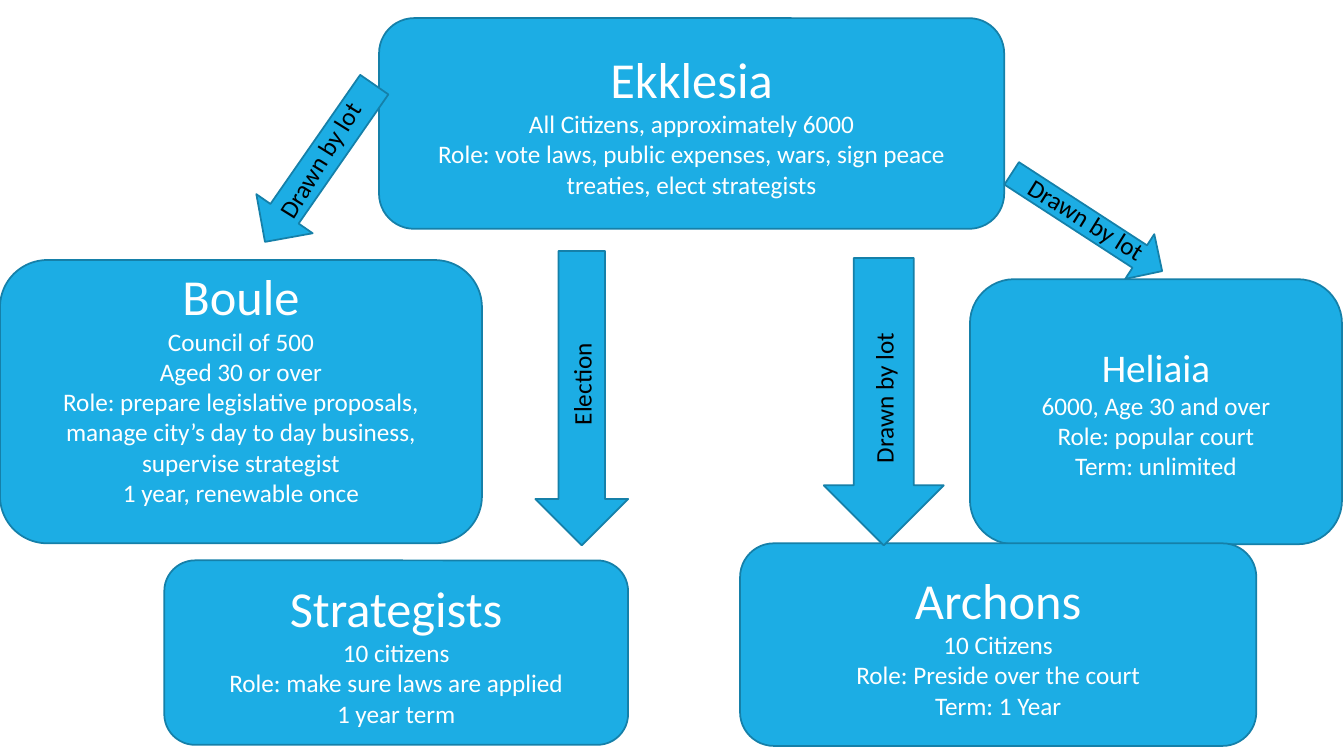
from pptx import Presentation
from pptx.dml.color import RGBColor
from pptx.enum.shapes import MSO_SHAPE
from pptx.enum.text import MSO_ANCHOR, PP_ALIGN
from pptx.util import Inches, Pt

ROUNDED = MSO_SHAPE.ROUNDED_RECTANGLE
RIGHT = MSO_SHAPE.RIGHT_ARROW
DOWN = MSO_SHAPE.DOWN_ARROW
MIDDLE = MSO_ANCHOR.MIDDLE
CENTER = PP_ALIGN.CENTER

FONT = "Calibri"
BLUE, EDGE, WHITE, BLACK = "1CADE4", "1580A9", "FFFFFF", "000000"
BODY_SIZE = 18
LABEL_HEIGHT = 0.4

INSTITUTIONS = [
    ((3.76, 0.18, 6.2, 2.09), "Ekklesia", 36, 0.05, [
        "All Citizens, approximately 6000",
        "Role: vote laws, public expenses, wars, sign peace treaties, elect strategists"]),
    ((9.62, 2.77, 3.69, 2.63), "Heliaia", 28, 0.05, [
        "6000, Age 30 and over", "Role: popular court", "Term: unlimited"]),
    ((0, 2.58, 4.78, 2.81), "Boule", 36, 0.35, [
        "Council of 500",
        "Aged 30 or over",
        "Role: prepare legislative proposals, manage city’s day to day business, supervise strategist",
        "1 year, renewable once"]),
    ((1.63, 5.56, 4.6, 1.83), "Strategists", 36, 0.05, [
        "10 citizens", "Role: make sure laws are applied", "1 year term"]),
    ((7.34, 5.39, 5.12, 2.01), "Archons", 36, 0.05, [
        "10 Citizens", "Role: Preside over the court", "Term: 1 Year"]),
]

APPOINTMENTS = [
    ((9.89, 1.94, 1.78, 0.53), RIGHT, 33, "Drawn by lot", 1.5, 31.9, 0.03),
    ((2.22, 1.28, 1.9, 0.68), RIGHT, 124.8, "Drawn by lot", 1.5, 301.9, 0.04),
    ((5.31, 2.49, 0.92, 2.92), DOWN, 0, "Election", 1.03, 270, 0.15),
    ((8.17, 2.56, 1.19, 2.85), DOWN, 0, "Drawn by lot", 1.5, 270, 0.04),
]


def color(value):
    return RGBColor.from_string(value)


def style_text(paragraph, size, value):
    paragraph.font.name = FONT
    paragraph.font.size = Pt(size)
    paragraph.font.color.rgb = color(value)


def add_blue_shape(slide, kind, box):
    shape = slide.shapes.add_shape(kind, *map(Inches, box))
    shape.shadow.inherit = False
    shape.fill.solid()
    shape.fill.fore_color.rgb = color(BLUE)
    shape.line.color.rgb = color(EDGE)
    shape.line.width = Pt(1.25)
    return shape


def add_institution(slide, box, title, title_size, bottom_inset, details):
    frame = add_blue_shape(slide, ROUNDED, box).text_frame
    frame.word_wrap = True
    frame.vertical_anchor = MIDDLE
    frame.margin_bottom = Inches(bottom_inset)
    frame.text = "\n".join([title, *details])
    for index, paragraph in enumerate(frame.paragraphs):
        paragraph.alignment = CENTER
        style_text(paragraph, BODY_SIZE if index else title_size, WHITE)


def add_appointment(slide, box, kind, angle, method, label_width, label_angle, label_rise):
    add_blue_shape(slide, kind, box).rotation = angle
    left, top, width, height = box
    label = slide.shapes.add_textbox(
        Inches(left + (width - label_width) / 2),
        Inches(top + (height - LABEL_HEIGHT) / 2 - label_rise),
        Inches(label_width), Inches(LABEL_HEIGHT))
    label.rotation = label_angle
    label.text_frame.word_wrap = False
    label.text_frame.text = method
    style_text(label.text_frame.paragraphs[0], BODY_SIZE, BLACK)


def main():
    deck = Presentation()
    deck.slide_width = Inches(13.33)
    deck.slide_height = Inches(7.5)
    slide = deck.slides.add_slide(deck.slide_layouts[6])
    for institution in INSTITUTIONS:
        add_institution(slide, *institution)
    for appointment in APPOINTMENTS:
        add_appointment(slide, *appointment)
    deck.save("out.pptx")


if __name__ == "__main__":
    main()
